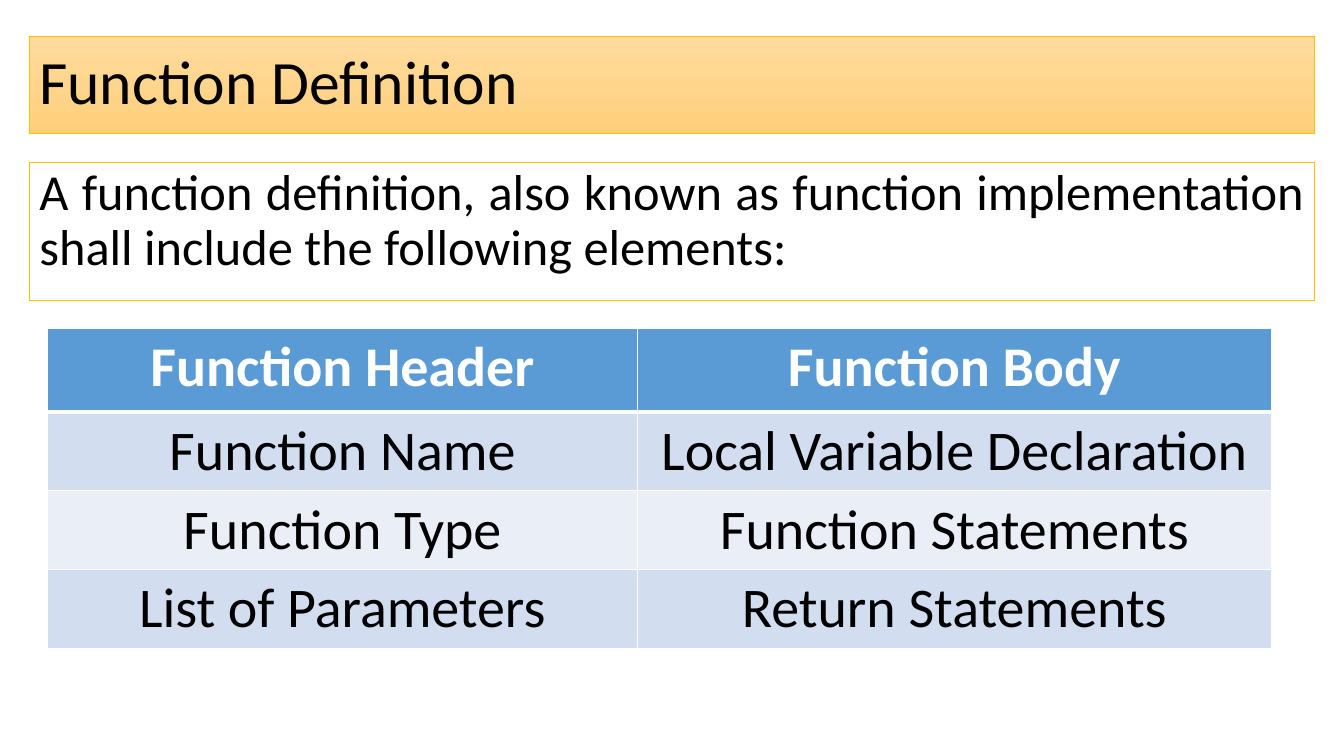
import dataclasses
import pptx
import pptx.dml.color
import pptx.enum.text
import pptx.oxml
import pptx.oxml.ns
import pptx.util

PX = 9144  # EMU per px, 100 px to the inch
FONT = "Calibri"
ALIGN = pptx.enum.text.PP_ALIGN
ANCHOR = pptx.enum.text.MSO_ANCHOR
COLORS = {
    "black": "000000", "white": "FFFFFF", "gold": "FFC000",
    "title_top": "FFDB9E", "title_bottom": "FFD07C",
    "header": "5B9BD5", "band_dark": "D2DEEF", "band_light": "EAEFF7",
}


@dataclasses.dataclass
class Panel:
    text: str
    top: int
    height: int
    size: int
    align: ALIGN
    anchor: ANCHOR
    line_width: float
    space_before: int


TITLE = Panel("Function Definition", 36, 96, 44, ALIGN.LEFT, ANCHOR.MIDDLE, 0.5, 0)
BODY = Panel("A function definition, also known as function implementation "
             "shall include the following elements:",
             161, 137, 36, ALIGN.JUSTIFY, ANCHOR.TOP, 1, 10)
PANEL_LEFT, PANEL_WIDTH = 29, 1275

ELEMENTS = [
    ("Function Header", "Function Body"),
    ("Function Name", "Local Variable Declaration"),
    ("Function Type", "Function Statements"),
    ("List of Parameters", "Return Statements"),
]
TABLE_LEFT, TABLE_TOP = 47, 326
COL_WIDTHS = (585, 629)
HEADER_HEIGHT, ROW_HEIGHT = 83, 78


def px(n: int) -> int:
    return pptx.util.Emu(n * PX)


def rgb(name: str) -> pptx.dml.color.RGBColor:
    return pptx.dml.color.RGBColor.from_string(COLORS[name])


def write(tf, text: str, *, size: int, align, color: str = "black", bold: bool = False):
    p = tf.paragraphs[0]
    p.alignment = align
    r = p.add_run()
    r.text = text
    r.font.name, r.font.size, r.font.bold = FONT, pptx.util.Pt(size), bold
    r.font.color.rgb = rgb(color)
    return p


def fill_panel(sp, panel: Panel):
    sp.left, sp.top = px(PANEL_LEFT), px(panel.top)
    sp.width, sp.height = px(PANEL_WIDTH), px(panel.height)
    sp.line.color.rgb = rgb("gold")
    sp.line.width = pptx.util.Pt(panel.line_width)
    tf = sp.text_frame
    tf.auto_size = pptx.enum.text.MSO_AUTO_SIZE.NONE
    tf.vertical_anchor = panel.anchor
    p = write(tf, panel.text, size=panel.size, align=panel.align)
    p.line_spacing = 0.9
    p.space_before = pptx.util.Pt(panel.space_before)
    return p


def set_borders(cell, widths: dict[str, int]) -> None:
    tcPr = cell._tc.get_or_add_tcPr()
    for side, width in widths.items():
        tcPr.append(pptx.oxml.parse_xml(
            f'<a:ln{side} {pptx.oxml.ns.nsdecls("a")} w="{pptx.util.Pt(width)}">'
            f'<a:solidFill><a:srgbClr val="{COLORS["white"]}"/></a:solidFill></a:ln{side}>'))


def add_elements_table(s) -> None:
    height = HEADER_HEIGHT + ROW_HEIGHT * (len(ELEMENTS) - 1)
    table = s.shapes.add_table(len(ELEMENTS), len(COL_WIDTHS), px(TABLE_LEFT), px(TABLE_TOP),
                               px(sum(COL_WIDTHS)), px(height)).table
    for column, width in zip(table.columns, COL_WIDTHS):
        column.width = px(width)
    for i, names in enumerate(ELEMENTS):
        header = i == 0
        table.rows[i].height = px(HEADER_HEIGHT if header else ROW_HEIGHT)
        band = "header" if header else ("band_light", "band_dark")[i % 2]
        for j, name in enumerate(names):
            cell = table.cell(i, j)
            write(cell.text_frame, name, size=40, align=ALIGN.CENTER,
                  color="white" if header else "black", bold=header)
            set_borders(cell, {"L": 1, "R": 1, "T": 3 if i == 1 else 1, "B": 3 if header else 1})
            cell.fill.solid()
            cell.fill.fore_color.rgb = rgb(band)


def main() -> None:
    prs = pptx.Presentation()
    prs.slide_width, prs.slide_height = px(1333), px(750)
    s = prs.slides.add_slide(prs.slide_layouts[1])

    # Title bar
    title = s.shapes.title
    fill_panel(title, TITLE)
    title.fill.gradient()
    title.fill.gradient_angle = 270
    for stop, color in zip(title.fill.gradient_stops, ("title_top", "title_bottom")):
        stop.color.rgb = rgb(color)

    # Introduction, without a bullet
    body = s.placeholders[1]
    p = fill_panel(body, BODY)
    body.fill.solid()
    body.fill.fore_color.rgb = rgb("white")
    pPr = p._p.get_or_add_pPr()
    pPr.set("marL", "0")
    pPr.set("indent", "0")
    pPr.append(pptx.oxml.parse_xml(f'<a:buNone {pptx.oxml.ns.nsdecls("a")}/>'))

    # Elements of a function definition
    add_elements_table(s)
    prs.save("out.pptx")


if __name__ == "__main__":
    main()
